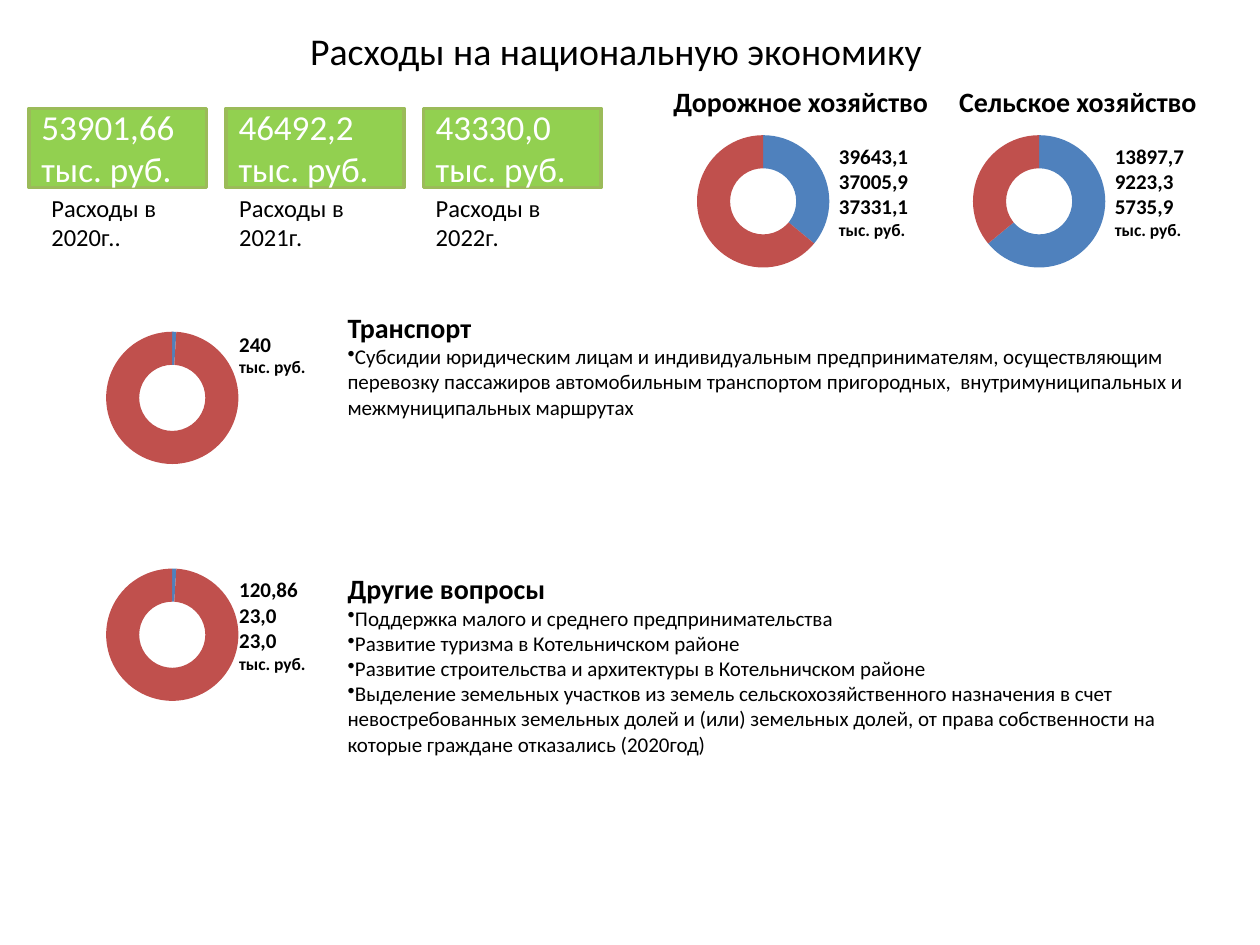
from dataclasses import dataclass

from lxml import etree
from pptx import Presentation
from pptx.chart.data import CategoryChartData
from pptx.dml.color import RGBColor
from pptx.enum.chart import XL_CHART_TYPE
from pptx.enum.shapes import MSO_SHAPE
from pptx.enum.text import MSO_ANCHOR, PP_ALIGN
from pptx.oxml import parse_xml
from pptx.oxml.ns import nsdecls, qn
from pptx.util import Inches, Pt

DOUGHNUT = XL_CHART_TYPE.DOUGHNUT
RECTANGLE = MSO_SHAPE.RECTANGLE
TOP, MIDDLE = MSO_ANCHOR.TOP, MSO_ANCHOR.MIDDLE
LEFT, CENTER = PP_ALIGN.LEFT, PP_ALIGN.CENTER


@dataclass(frozen=True)
class Theme:
    font: str = "Calibri"
    ink: RGBColor = RGBColor(0, 0, 0)
    white: RGBColor = RGBColor(255, 255, 255)
    card: RGBColor = RGBColor(0x92, 0xD0, 0x50)
    border: RGBColor = RGBColor(0x9B, 0xBB, 0x59)
    slices: tuple = (RGBColor(0x4F, 0x81, 0xBD), RGBColor(0xC0, 0x50, 0x4D))
    title: float = 21.6
    amount: float = 20
    heading: float = 16
    year: float = 14
    body: float = 12
    unit: float = 10


THEME = Theme()
UNIT = "тыс. руб."
CARD_LEFT, CARD_STEP = 0.23, 1.565
YEARS = [
    ("53901,66", "2020г..", 0.31),
    ("46492,2", "2021г.", 1.8),
    ("43330,0", "2022г.", 3.36),
]
RINGS = [
    (5.31, 0.94, 36, 6.56, 1.09, ["39643,1", "37005,9", "37331,1"]),
    (7.5, 0.94, 64, 8.75, 1.09, ["13897,7", "9223,3", "5735,9"]),
    (0.62, 2.5, 1, 1.8, 2.58, ["240"]),
    (0.62, 4.38, 1, 1.8, 4.53, ["120,86", "23,0", "23,0"]),
]
HEADINGS = [
    ("Дорожное хозяйство", 5.23, 2.25),
    ("Сельское хозяйство", 7.5, 2.11),
]
SECTIONS = [
    (2.58, 0.63, "Транспорт", [
        "Субсидии юридическим лицам и индивидуальным предпринимателям, "
        "осуществляющим перевозку пассажиров автомобильным транспортом "
        "пригородных,  внутримуниципальных и межмуниципальных маршрутах",
    ]),
    (4.45, 1.64, "Другие вопросы", [
        "Поддержка малого и среднего предпринимательства",
        "Развитие туризма в Котельничском районе",
        "Развитие строительства и архитектуры в Котельничском районе",
        "Выделение земельных участков из земель сельскохозяйственного "
        "назначения в счет невостребованных земельных долей и (или) "
        "земельных долей, от права собственности на которые граждане "
        "отказались (2020год)",
    ]),
]


def add_line(tf, text, size, bold=False, color=THEME.ink, align=LEFT, bullet=False):
    p = tf.paragraphs[0]
    if p.runs:
        p = tf.add_paragraph()
    p.alignment = align
    r = p.add_run()
    r.text = text
    r.font.name = THEME.font
    r.font.size = Pt(size)
    r.font.bold = bold
    r.font.color.rgb = color
    if bullet:
        etree.SubElement(p._p.get_or_add_pPr(), qn("a:buChar")).set("char", "•")


def add_text(s, left, top, width, height, anchor=TOP, wrap=True):
    box = s.shapes.add_textbox(
        Inches(left), Inches(top), Inches(width), Inches(height))
    tf = box.text_frame
    tf.word_wrap = wrap
    tf.vertical_anchor = anchor
    return tf


def add_ring(s, left, top, share):
    data = CategoryChartData()
    data.categories = ["1", "2"]
    data.add_series("Series 1", [share, 100 - share])
    chart = s.shapes.add_chart(
        DOUGHNUT, Inches(left), Inches(top), Inches(1.48), Inches(1.33), data).chart
    chart.has_legend = False
    chart.has_title = False
    chart.font.name = THEME.font
    chart.font.size = Pt(18)
    chart.font.color.rgb = THEME.ink
    plot = chart.plots[0]
    plot.vary_by_categories = True
    for i, color in enumerate(THEME.slices):
        fill = plot.series[0].points[i].format.fill
        fill.solid()
        fill.fore_color.rgb = color
    area = chart._chartSpace.chart.plotArea
    for old in area.findall(qn("c:layout")):
        area.remove(old)
    area.insert(0, parse_xml(
        f'<c:layout {nsdecls("c")}><c:manualLayout><c:layoutTarget val="inner"/>'
        '<c:xMode val="edge"/><c:yMode val="edge"/><c:x val="0.15"/><c:y val="0.1"/>'
        '<c:w val="0.71"/><c:h val="0.79"/></c:manualLayout></c:layout>'))


def add_amounts(s, left, top, values):
    tf = add_text(s, left, top, 0.94, 0.3 + 0.2 * len(values))
    for value in values:
        add_line(tf, value, THEME.body, bold=True)
    add_line(tf, UNIT, THEME.unit, bold=True)


def add_section(s, top, height, heading, items):
    tf = add_text(s, 2.66, top, 6.88, height, MIDDLE)
    add_line(tf, heading, THEME.heading, bold=True)
    for item in items:
        add_line(tf, item, THEME.body, bullet=True)


def add_card(s, left, amount):
    sp = s.shapes.add_shape(
        RECTANGLE, Inches(left), Inches(0.86), Inches(1.41), Inches(0.63))
    sp.shadow.inherit = False
    sp.fill.solid()
    sp.fill.fore_color.rgb = THEME.card
    sp.line.color.rgb = THEME.border
    sp.line.width = Pt(2)
    tf = sp.text_frame
    tf.word_wrap = True
    tf.vertical_anchor = MIDDLE
    for text in (amount, UNIT):
        add_line(tf, text, THEME.amount, color=THEME.white)


def add_year(s, left, year):
    tf = add_text(s, left, 1.48, 1.04, 0.57, wrap=False)
    for text in ("Расходы в", year):
        add_line(tf, text, THEME.year)


def main():
    prs = Presentation()
    prs.slide_width, prs.slide_height = Inches(10), Inches(7.5)
    s = prs.slides.add_slide(prs.slide_layouts[6])

    title = add_text(s, 0.39, 0.16, 9, 0.48, MIDDLE)
    add_line(title, "Расходы на национальную экономику", THEME.title, align=CENTER)
    for left, top, share, label_left, label_top, values in RINGS:
        add_ring(s, left, top, share)
        add_amounts(s, label_left, label_top, values)
    for text, left, width in HEADINGS:
        tf = add_text(s, left, 0.62, width, 0.37, wrap=False)
        add_line(tf, text, THEME.heading, bold=True, align=CENTER)
    for section in SECTIONS:
        add_section(s, *section)
    for i, (amount, year, year_left) in enumerate(YEARS):
        add_card(s, CARD_LEFT + i * CARD_STEP, amount)
        add_year(s, year_left, year)

    prs.save("out.pptx")


if __name__ == "__main__":
    main()
